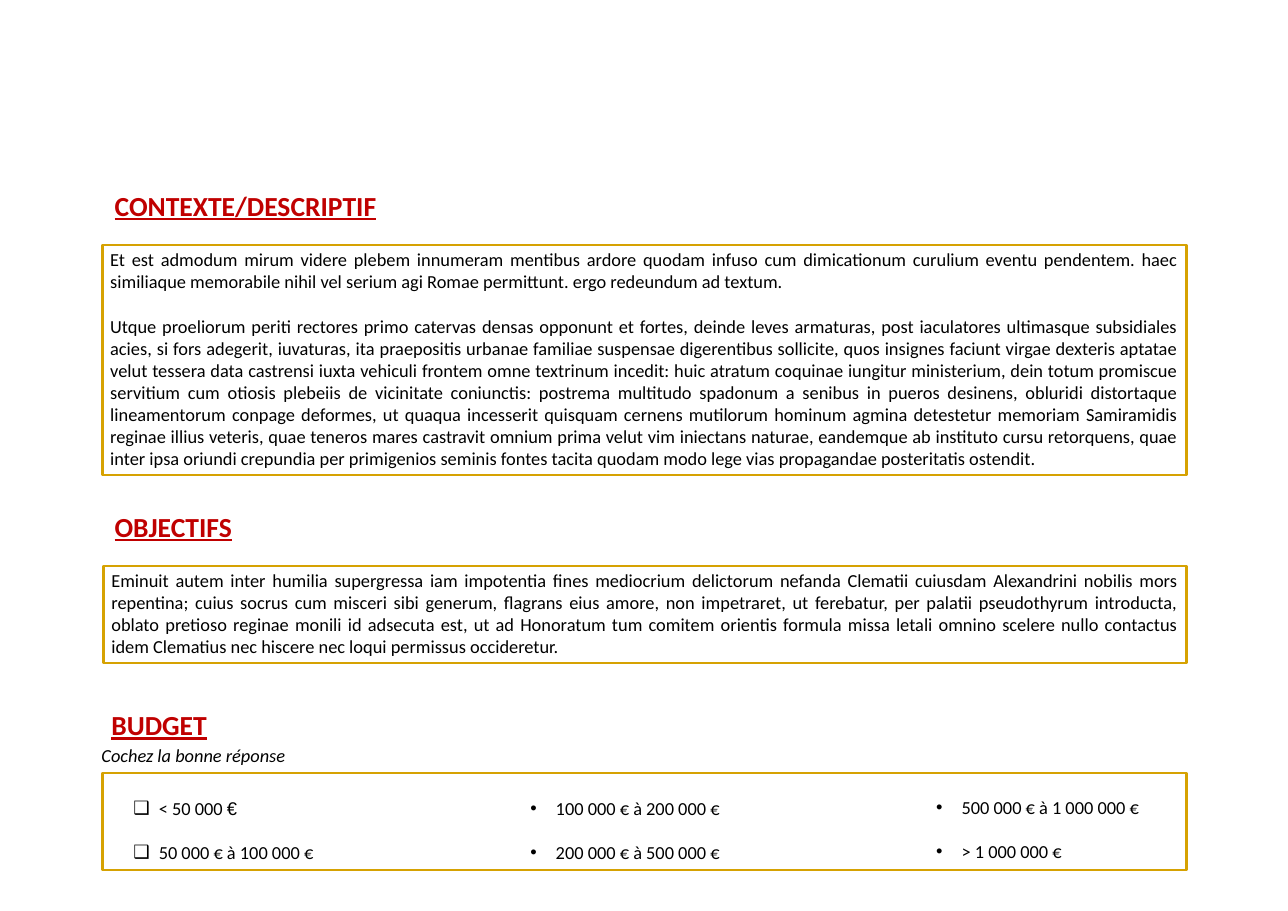
"""Build the project sheet slide: context, objectives and budget choices."""
from pptx import Presentation, util as u
from pptx.dml.color import RGBColor
from pptx.enum import shapes, text
from pptx.oxml import parse_xml
from pptx.oxml.ns import nsdecls

THEME = {
    "red": RGBColor.from_string("C00000"),
    "gold": RGBColor.from_string("D6A202"),
    "black": RGBColor.from_string("000000"),
    "head": {"name": "Calibri", "size": u.Pt(18), "bold": True, "underline": True},
    "body": {"name": "Calibri", "size": u.Pt(12), "bold": False},
    "note": {"name": "Calibri", "size": u.Pt(12), "bold": False, "italic": True},
}
LEFT, JUSTIFY = text.PP_ALIGN.LEFT, text.PP_ALIGN.JUSTIFY
BULLET_INDENT = u.Inches(0.23)

prs = Presentation()
prs.slide_width, prs.slide_height = u.Inches(11.68), u.Inches(8.26)
s = prs.slides.add_slide(prs.slide_layouts[4])
holders = s.placeholders


def area(x, y, w, h):
    """Turn percentages of the slide's size into a position and size."""
    sizes = (prs.slide_width, prs.slide_height) * 2
    return [int(share * size / 100) for share, size in zip((x, y, w, h), sizes)]


def fill_text(sp, paragraphs, style, color, inset, align=LEFT, gap=0, spacing=1, bullet=None):
    """Write the paragraphs, each a list of (words, font name), into the shape."""
    tf = sp.text_frame
    frame = {"word_wrap": True, "auto_size": text.MSO_AUTO_SIZE.NONE,
             "vertical_anchor": text.MSO_ANCHOR.TOP,
             "margin_left": u.Inches(inset[0]), "margin_right": u.Inches(inset[0]),
             "margin_top": u.Inches(inset[1]), "margin_bottom": u.Inches(inset[1])}
    for key, value in frame.items():
        setattr(tf, key, value)
    for i, runs in enumerate(paragraphs):
        p = tf.add_paragraph() if i else tf.paragraphs[0]
        layout = {"alignment": align, "line_spacing": spacing, "space_before": u.Pt(gap if i else 0)}
        for key, value in layout.items():
            setattr(p, key, value)
        pPr = p._p.get_or_add_pPr()
        indent = BULLET_INDENT if bullet else 0
        pPr.set("marL", str(indent))
        pPr.set("indent", str(-indent))
        if bullet:
            pPr.append(parse_xml(f'<a:buFont {nsdecls("a")} typeface="Arial"/>'))
            pPr.append(parse_xml(f'<a:buChar {nsdecls("a")} char="{bullet}"/>'))
        else:
            pPr.append(parse_xml(f'<a:buNone {nsdecls("a")}/>'))
        for words, font in runs:
            r = p.add_run()
            r.text = words
            for key, value in {**THEME[style], "name": font}.items():
                setattr(r.font, key, value)
            r.font.color.rgb = color


headings = [
    ("CONTEXTE/DESCRIPTIF", (8.05, 20.1, 24.57, 4.84), (0.1, 0.05)),
    ("OBJECTIFS", (8.05, 55.33, 11.99, 4.84), (0.1, 0.05)),
    ("BUDGET", (8.05, 77.36, 11.99, 4.48), (0.07, 0.03)),
]
for i, (words, box, inset) in enumerate(headings):
    sp = s.shapes.add_textbox(*area(*box)) if i else s.shapes.title
    sp.left, sp.top, sp.width, sp.height = area(*box)
    fill_text(sp, [[(words, "Calibri")]], "head", THEME["red"], inset)

frames = [
    ((7.96, 26.88, 84.16, 25.3), [
        ["Et est admodum mirum videre plebem innumeram mentibus ardore quodam infuso cum "
         "dimicationum curulium eventu pendentem. haec similiaque memorabile nihil vel serium "
         "agi Romae permittunt. ergo redeundum ad textum."],
        ["Utque proeliorum periti rectores primo catervas densas opponunt et fortes, deinde leves "
         "armaturas, post iaculatores ultimasque subsidiales acies, si fors adegerit, iuvaturas, "
         "ita praepositis urbanae familiae suspensae digerentibus sollicite, quos insignes "
         "faciunt virgae dexteris aptatae velut tessera data castrensi iuxta vehiculi frontem "
         "omne textrinum incedit:",
         "huic atratum coquinae iungitur ministerium, dein totum promiscue servitium cum otiosis "
         "plebeiis de vicinitate coniunctis:",
         "postrema multitudo spadonum a senibus in pueros desinens, obluridi distortaque "
         "lineamentorum conpage deformes, ut quaqua incesserit quisquam cernens mutilorum "
         "hominum agmina detestetur memoriam Samiramidis reginae illius veteris, quae teneros "
         "mares castravit omnium prima velut vim iniectans naturae, eandemque ab instituto cursu "
         "retorquens, quae inter ipsa oriundi crepundia per primigenios seminis fontes tacita "
         "quodam modo lege vias propagandae posteritatis ostendit."]]),
    ((8.05, 62.11, 84.08, 10.65), [
        ["Eminuit autem inter humilia supergressa iam impotentia fines mediocrium delictorum "
         "nefanda Clematii cuiusdam Alexandrini nobilis mors repentina; cuius socrus cum misceri "
         "sibi generum, flagrans eius amore, non impetraret, ut ferebatur, per palatii "
         "pseudothyrum introducta, oblato pretioso reginae monili id adsecuta est, ut ad "
         "Honoratum tum comitem orientis formula missa letali omnino scelere nullo contactus "
         "idem Clematius nec hiscere nec loqui permissus occideretur."]]),
    ((7.96, 84.87, 84.16, 10.65), []),
]
for box, paragraphs in frames:
    sp = s.shapes.add_shape(shapes.MSO_SHAPE.RECTANGLE, *area(*box))
    sp.shadow.inherit = False
    sp.fill.background()
    sp.line.color.rgb = THEME["gold"]
    sp.line.width = u.Pt(1.5)
    fill_text(sp, [[(" ".join(clauses), "Calibri")] for clauses in paragraphs], "body",
              THEME["black"], (0.07, 0.03), align=JUSTIFY, gap=14.6)

note = holders[3]
note.left, note.top, note.width, note.height = area(7.45, 81.11, 30.05, 3.63)
fill_text(note, [[("Cochez la bonne réponse", "Calibri")]], "note", THEME["black"], (0.05, 0.05))

choices = [
    (1, "❑", (9.93, 84.5, 15.58, 11.02),
     [[("< 50 000 ", "Calibri"), ("€", "Arial")], [("50 000 € à 100 000 €", "Calibri")]]),
    (2, "•", (40.75, 84.5, 16.35, 11.02),
     [[("100 000 € à 200 000 €", "Calibri")], [("200 000 € à 500 000 €", "Calibri")]]),
    (4, "•", (72.26, 84.38, 17.12, 11.02),
     [[("500 000 € à 1 000 000 €", "Calibri")], [("> 1 000 000 €", "Calibri")]]),
]
for idx, bullet, box, amounts in choices:
    sp = holders[idx]
    sp.left, sp.top, sp.width, sp.height = area(*box)
    fill_text(sp, amounts, "body", THEME["black"], (0.05, 0.05), align=JUSTIFY,
              spacing=2.0, bullet=bullet)

prs.save("out.pptx")
